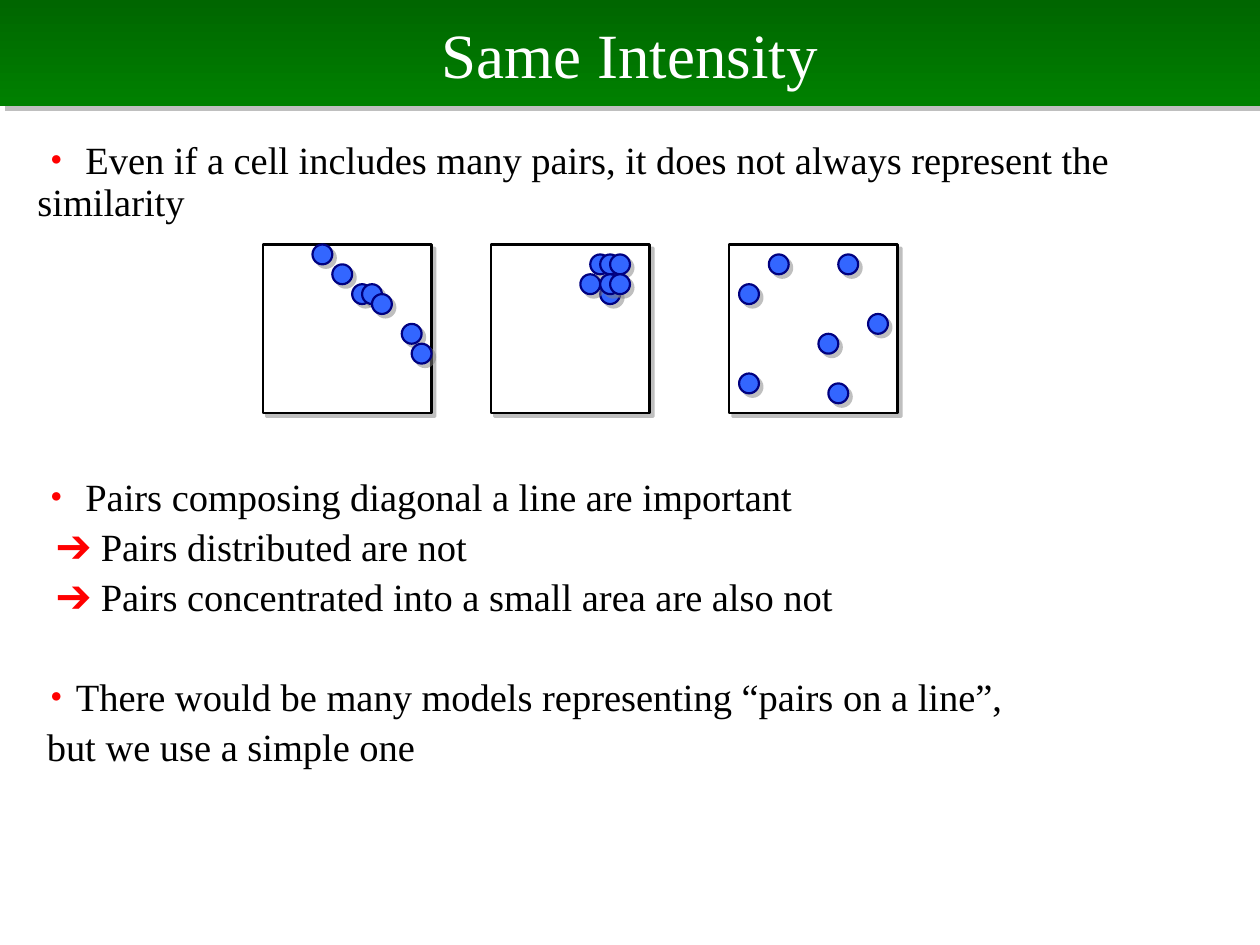
from dataclasses import dataclass

from lxml.etree import SubElement
from pptx import Presentation
from pptx.dml.color import RGBColor
from pptx.enum.shapes import MSO_SHAPE as Preset
from pptx.enum.text import MSO_ANCHOR as Anchor, MSO_AUTO_SIZE as AutoSize, PP_ALIGN as Align
from pptx.oxml.ns import qn
from pptx.util import Cm, Pt


@dataclass(frozen=True)
class Theme:
    font: str = "Times New Roman"
    title_size: float = 36
    body_size: float = 22
    line_spacing: float = 0.9
    paragraph_gap: float = 5
    title_text: str = "FFFFFF"
    banner_top: str = "006600"
    banner_bottom: str = "008000"
    text: str = "000000"
    marker: str = "FF0000"
    panel: str = "FFFFFF"
    panel_line: str = "000000"
    dot: str = "3366FF"
    dot_line: str = "000080"
    shadow: str = "808080"


THEME = Theme()
STEP = 0.2
DOT_SIZE = 2 * STEP

POINTS = [
    ("・ ", "Even if a cell includes many pairs, it does not always represent the similarity", 0, THEME.paragraph_gap),
    ("・ ", "Pairs composing diagonal a line are important", 0, 145),
    ("➔ ", "Pairs distributed are not", 0.39, THEME.paragraph_gap),
    ("➔ ", "Pairs concentrated into a small area are also not", 0.39, THEME.paragraph_gap),
    ("・", "There would be many models representing “pairs on a line”,", 0, 33),
    ("", "but we use a simple one", 0.19, THEME.paragraph_gap),
]

PANELS = [
    (5.3, 3.4, [(5, 0), (7, 2), (9, 4), (10, 4), (11, 5), (14, 8), (15, 10)]),
    (9.9, 3.2, [(11, 4), (9, 3), (10, 1), (11, 1), (12, 1), (11, 3), (12, 3)]),
    (14.7, 3.4, [(10, 14), (4, 1), (11, 1), (14, 7), (1, 4), (1, 13), (9, 9)]),
]


def color(value):
    return RGBColor.from_string(value)


def place(shape, box):
    shape.left, shape.top, shape.width, shape.height = (Cm(length) for length in box)


def write(para, text, *, size, ink, bold=False):
    span = para.add_run()
    span.text = text
    span.font.name = THEME.font
    span.font.size = Pt(size)
    span.font.bold = bold
    span.font.color.rgb = color(ink)
    SubElement(span.font._element, qn("a:ea"), typeface=THEME.font)


def cast_shadow(shape, distance):
    shape.shadow.inherit = False
    effects = shape._element.spPr.find(qn("a:effectLst"))
    shadow = SubElement(effects, qn("a:outerShdw"), dist=str(Pt(distance)), dir="2700000",
                        algn="ctr", rotWithShape="0")
    tint = SubElement(shadow, qn("a:srgbClr"), val=THEME.shadow)
    SubElement(tint, qn("a:alpha"), val="50000")


def add_figure(page, preset, box, *, fill, line, weight):
    shape = page.shapes.add_shape(preset, *(Cm(length) for length in box))
    shape.fill.solid()
    shape.fill.fore_color.rgb = color(fill)
    shape.line.color.rgb = color(line)
    shape.line.width = Pt(weight)
    cast_shadow(shape, 2.8)


def fill_banner(title, box, text):
    place(title, box)
    title.fill.gradient()
    title.fill.gradient_angle = 270
    for stop, tone in zip(title.fill.gradient_stops, (THEME.banner_top, THEME.banner_bottom)):
        stop.color.rgb = color(tone)
    cast_shadow(title, 4.2)
    frame = title.text_frame
    frame.auto_size = AutoSize.NONE
    frame.vertical_anchor = Anchor.MIDDLE
    para = frame.paragraphs[0]
    para.alignment = Align.CENTER
    write(para, text, size=THEME.title_size, ink=THEME.title_text)


def fill_points(body, box, points):
    place(body, box)
    frame = body.text_frame
    frame.word_wrap = True
    frame.auto_size = AutoSize.NONE
    frame.vertical_anchor = Anchor.TOP
    for number, (marker, text, indent, gap) in enumerate(points):
        para = frame.add_paragraph() if number else frame.paragraphs[0]
        para.alignment = Align.LEFT
        para.line_spacing = THEME.line_spacing
        para.space_before = Pt(gap)
        layout = para._p.get_or_add_pPr()
        layout.set("marL", str(Cm(indent)))
        layout.set("indent", "0")
        if marker:
            write(para, marker, size=THEME.body_size, ink=THEME.marker, bold=True)
        write(para, text, size=THEME.body_size, ink=THEME.text)


def add_dot_panel(page, box, dots):
    left, top, _, _ = box
    add_figure(page, Preset.RECTANGLE, box, fill=THEME.panel, line=THEME.panel_line, weight=1.5)
    for column, row in dots:
        dot_box = (left + column * STEP, top + row * STEP, DOT_SIZE, DOT_SIZE)
        add_figure(page, Preset.OVAL, dot_box, fill=THEME.dot, line=THEME.dot_line, weight=1.25)


def main():
    deck = Presentation()
    deck.slide_width, deck.slide_height = Cm(25.4), Cm(19.05)
    page = deck.slides.add_slide(deck.slide_layouts[0])
    fill_points(page.placeholders[1], (0.5, 2.72, 23.8, 15.8), POINTS)
    fill_banner(page.shapes.title, (0, 0, 25.4, 2.13), "Same Intensity")
    for left, width, dots in PANELS:
        add_dot_panel(page, (left, 4.93, width, 3.4), dots)
    deck.save("out.pptx")


if __name__ == "__main__":
    main()
